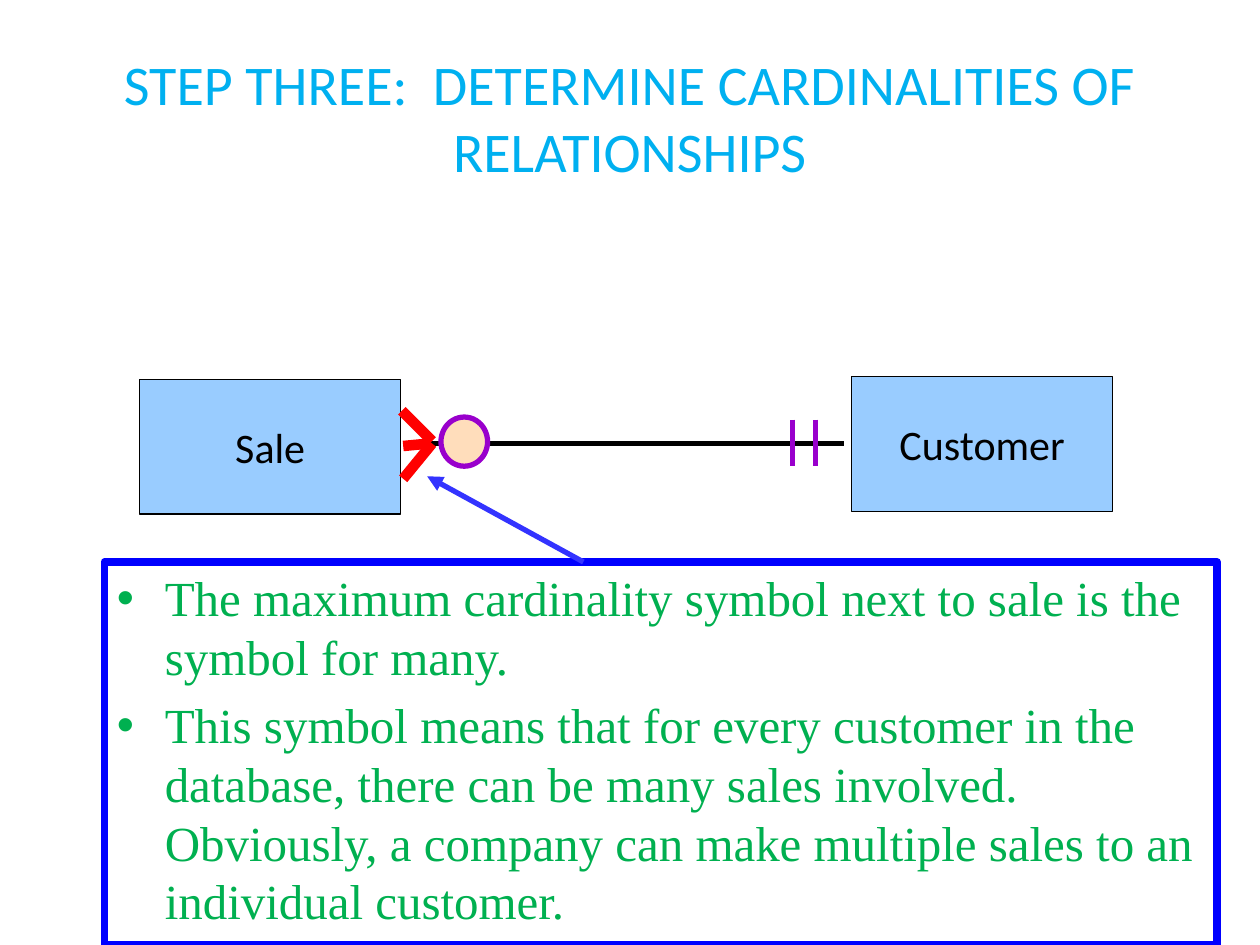
from lxml import etree
from pptx import Presentation
from pptx.dml.color import RGBColor
from pptx.enum.shapes import MSO_CONNECTOR, MSO_SHAPE
from pptx.enum.text import MSO_ANCHOR, PP_ALIGN
from pptx.oxml.ns import qn
from pptx.util import Emu, Pt

EMU_PER_PX = 9144  # 100 px to the inch
RECTANGLE, OVAL = MSO_SHAPE.RECTANGLE, MSO_SHAPE.OVAL
STRAIGHT = MSO_CONNECTOR.STRAIGHT
MIDDLE, TOP = MSO_ANCHOR.MIDDLE, MSO_ANCHOR.TOP
LEFT, CENTER = PP_ALIGN.LEFT, PP_ALIGN.CENTER

TITLE = "STEP THREE:  DETERMINE CARDINALITIES OF RELATIONSHIPS"
NOTES = [
    "The maximum cardinality symbol next to sale is the symbol for many.",
    "This symbol means that for every customer in the database, there can be "
    "many sales involved.  Obviously, a company can make multiple sales to an "
    "individual customer.",
]


def px(value):
    return Emu(value * EMU_PER_PX)


def color(hex_value):
    return RGBColor.from_string(hex_value)


def format_font(paragraph, name, size, hex_value):
    for run in paragraph.runs:
        run.font.name = name
        run.font.size = Pt(size)
        run.font.color.rgb = color(hex_value)


def add_box(slide, kind, box, fill, line, width):
    shape = slide.shapes.add_shape(kind, *map(px, box))
    shape.shadow.inherit = False
    shape.fill.solid()
    shape.fill.fore_color.rgb = color(fill)
    shape.line.color.rgb = color(line)
    shape.line.width = Pt(width)
    return shape


def add_line(slide, start, end, hex_value, width):
    connector = slide.shapes.add_connector(STRAIGHT, *map(px, start + end))
    connector.line.color.rgb = color(hex_value)
    connector.line.width = Pt(width)
    etree.SubElement(connector._element.spPr, qn("a:effectLst"))
    return connector


def add_title(slide, box):
    text_frame = slide.shapes.add_textbox(*map(px, box)).text_frame
    text_frame.word_wrap = True
    text_frame.vertical_anchor = MIDDLE
    text_frame.text = TITLE
    text_frame.paragraphs[0].alignment = CENTER
    format_font(text_frame.paragraphs[0], "Calibri", 32, "00B0F0")


def add_entity(slide, box, name):
    text_frame = add_box(slide, RECTANGLE, box, "99CCFF", "000000", 0.75).text_frame
    text_frame.word_wrap = False
    text_frame.vertical_anchor = MIDDLE
    text_frame.text = name
    text_frame.paragraphs[0].alignment = CENTER
    format_font(text_frame.paragraphs[0], "Calibri", 24, "000000")


def add_relationship(slide, box):
    """Draw a line with a crow's foot and circle at left and two bars at right."""
    left, top, width, height = box
    right, middle = left + width, top + height // 2
    add_line(slide, (left, middle), (right, middle), "000000", 3)
    for offset in (41, 23):
        bar = right - offset
        add_line(slide, (bar, middle - 19), (bar, middle + 18), "9900CC", 3)
    toes = [((21, -2), (-3, -26)), ((-2, 2), (19, 0)), ((21, 0), (-2, 28))]
    for (x1, y1), (x2, y2) in toes:
        add_line(slide, (left + x1, middle + y1), (left + x2, middle + y2),
                 "FF0000", 6)
    add_box(slide, OVAL, (left + 28, middle - 21, 37, 39), "FFDDBB", "9900CC", 3)


def add_bullet(paragraph):
    properties = paragraph._p.get_or_add_pPr()
    properties.set("marL", str(px(38)))
    properties.set("indent", str(px(-38)))
    etree.SubElement(properties, qn("a:buFont"), typeface="Arial")
    etree.SubElement(properties, qn("a:buChar"), char="•")


def add_notes(slide, box):
    text_frame = add_box(slide, RECTANGLE, box, "FFFFFF", "0000FF", 4.5).text_frame
    text_frame.word_wrap = True
    text_frame.vertical_anchor = TOP
    text_frame.text = "\n".join(NOTES)
    for index, paragraph in enumerate(text_frame.paragraphs):
        add_bullet(paragraph)
        paragraph.alignment = LEFT
        paragraph.line_spacing = Pt(33.5)
        paragraph.space_before = Pt(5.6 if index else 0)
        format_font(paragraph, "Times New Roman", 28, "00B050")


def add_pointer(slide, start, end):
    pointer = add_line(slide, start, end, "3333FF", 3)
    etree.SubElement(pointer.line._get_or_add_ln(), qn("a:tailEnd"), type="triangle")


def main():
    presentation = Presentation()
    presentation.slide_width, presentation.slide_height = px(1000), px(750)
    slide = presentation.slides.add_slide(presentation.slide_layouts[6])
    add_title(slide, (50, 30, 900, 125))
    add_entity(slide, (111, 301, 207, 107), "Sale")
    add_entity(slide, (676, 299, 207, 107), "Customer")
    add_relationship(slide, (322, 326, 348, 52))
    add_notes(slide, (83, 446, 883, 304))
    add_pointer(slide, (463, 446), (339, 378))
    presentation.save("out.pptx")


if __name__ == "__main__":
    main()
